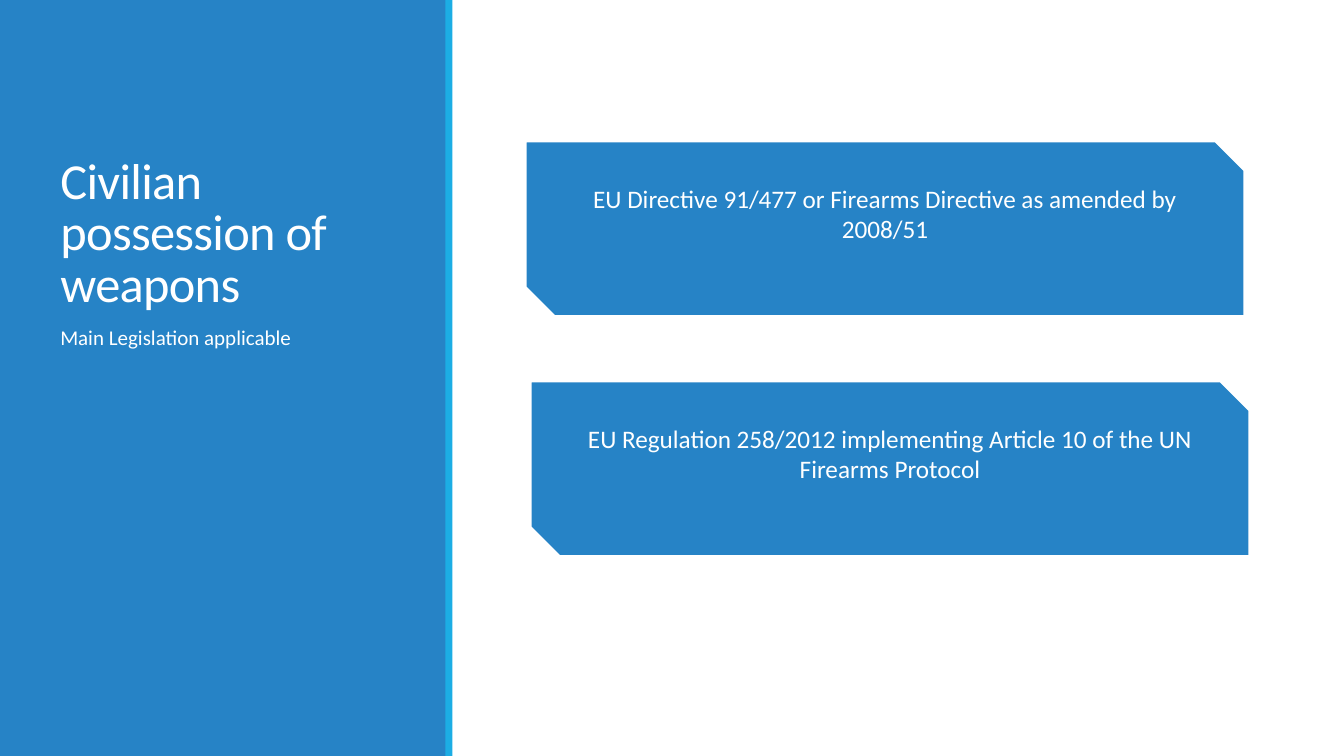
from pptx import Presentation
from pptx import util as u
from pptx.dml.color import RGBColor
from pptx.enum import shapes, text
from pptx.oxml import ns

Pt = u.Pt
BLUE = RGBColor(0x26, 0x83, 0xC6)
CYAN = RGBColor(0x1C, 0xAD, 0xE4)
WHITE = RGBColor(0xFF, 0xFF, 0xFF)
FONT = "Calibri"
WIDE, HIGH = 960, 540


def write(shape, words, size=18, align=text.PP_ALIGN.LEFT,
          anchor=text.MSO_ANCHOR.TOP, lead=1.0, before=0, after=0,
          bottom=3.6, track=0):
    """Fill a shape with one formatted paragraph."""
    frame = shape.text_frame
    frame.word_wrap = True
    frame.auto_size = text.MSO_AUTO_SIZE.NONE
    frame.vertical_anchor = anchor
    frame.margin_bottom = Pt(bottom)
    para = frame.paragraphs[0]
    para.alignment = align
    para.line_spacing = lead
    para.space_before, para.space_after = Pt(before), Pt(after)
    run = para.add_run()
    run.text = words
    run.font.name = FONT
    run.font.size = Pt(size)
    run.font.color.rgb = WHITE
    if track:
        for prop in shape.element.iter(ns.qn("a:rPr")):
            prop.set("spc", str(round(track * 100)))


class Page:
    def __init__(self, deck):
        self.slide = deck.slides.add_slide(deck.slide_layouts[5])
        self.items = self.slide.shapes

    def block(self, kind, box, fill, line=None):
        shape = self.items.add_shape(kind, *map(Pt, box))
        shape.shadow.inherit = False
        shape.fill.solid()
        shape.fill.fore_color.rgb = fill
        if line is None:
            shape.line.fill.background()
        else:
            shape.line.color.rgb = line
            shape.line.width = Pt(2)
        return shape

    def band(self, left, width, fill):
        self.block(shapes.MSO_SHAPE.RECTANGLE, (left, 0, width, HIGH), fill)

    def title(self, words, box):
        head = self.items.title
        head.left, head.top, head.width, head.height = map(Pt, box)
        write(head, words, size=36, anchor=text.MSO_ANCHOR.BOTTOM,
              lead=0.85, track=-0.5)
        # Bring the title in front of the side panel
        self.items.element.append(head.element)

    def note(self, words, box):
        label = self.items.add_textbox(*map(Pt, box))
        write(label, words, size=15, lead=0.9, before=12, after=2)

    def card(self, words, left, top):
        shape = self.block(shapes.MSO_SHAPE.SNIP_2_DIAG_RECTANGLE,
                           (left, top, 514.1, 125.3), BLUE, WHITE)
        # The deep lower inset lifts the text above the middle
        write(shape, words, align=text.PP_ALIGN.CENTER,
              anchor=text.MSO_ANCHOR.MIDDLE, bottom=25.6)


def main():
    deck = Presentation()
    deck.slide_width, deck.slide_height = Pt(WIDE), Pt(HIGH)
    page = Page(deck)

    # Side panel
    page.band(0, 319, BLUE)
    page.band(318.2, 5, CYAN)
    page.title("Civilian possession of weapons", (36, 46.8, 252, 180))
    page.note("Main Legislation applicable", (36, 230.4, 252, 266.4))

    # Legislation cards
    page.card("EU Directive 91/477 or Firearms Directive as amended by 2008/51",
              375.1, 100.8)
    page.card("EU Regulation 258/2012 implementing Article 10 of the UN "
              "Firearms Protocol", 378.7, 272.2)

    deck.save("out.pptx")


if __name__ == "__main__":
    main()
